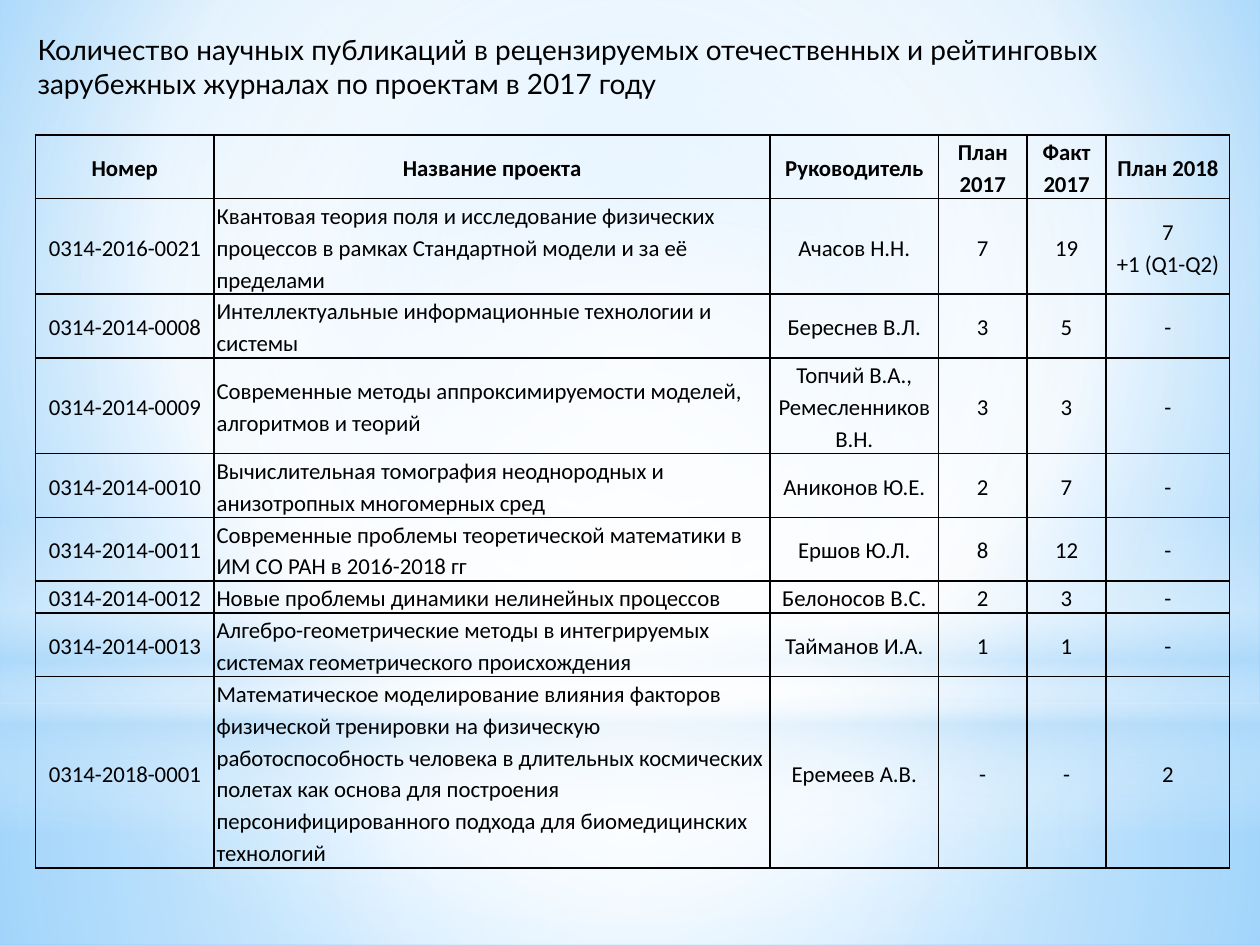
"""Build a slide with a table of publication counts by research project."""
import lxml.etree
import pptx
import pptx.dml.color
import pptx.enum.shapes
import pptx.enum.text
import pptx.oxml
import pptx.oxml.ns
import pptx.util
from pptx.util import Inches


def color(value):
    return pptx.dml.color.RGBColor.from_string(value)


def set_gradient(properties, stops, direction):
    gradient = pptx.oxml.parse_xml(
        f'<a:gradFill {pptx.oxml.ns.nsdecls("a")} rotWithShape="1"><a:gsLst>'
        + "".join(
            f'<a:gs pos="{position * 1000}"><a:srgbClr val="{value}">'
            f'<a:alpha val="{opacity * 1000}"/></a:srgbClr></a:gs>'
            for position, value, opacity in stops
        )
        + f"</a:gsLst>{direction}</a:gradFill>"
    )
    solid = properties.find(pptx.oxml.ns.qn("a:solidFill"))
    properties.replace(solid, gradient)


RADIAL = '<a:path path="circle"><a:fillToRect l="{}" t="{}" r="{}" b="{}"/></a:path>'
CENTER = RADIAL.format(50000, 50000, 50000, 50000)
VERTICAL = '<a:lin ang="5400000" scaled="0"/>'
RECTANGLE = pptx.enum.shapes.MSO_SHAPE.RECTANGLE
OVAL = pptx.enum.shapes.MSO_SHAPE.OVAL

presentation = pptx.Presentation()
presentation.slide_width = Inches(10)
presentation.slide_height = Inches(7.5)
slide = presentation.slides.add_slide(presentation.slide_layouts[6])

slide.background.fill.solid()
set_gradient(
    slide.background._cSld.bg.bgPr,
    [(0, "9ED5FF", 100), (60, "FFFFFF", 100), (100, "5BB9FF", 100)],
    RADIAL.format(20000, 10000, 20000, 60000),
)

backdrops = [
    (RECTANGLE, 0, 5.58, 1.92, CENTER,
     [(0, "FFFFFF", 91), (37, "FFFFFF", 76), (100, "B4DCFA", 79)]),
    (RECTANGLE, 0, 0, 5.58, CENTER,
     [(0, "FFFFFF", 89), (48, "FFFFFF", 62), (100, "B4DCFA", 79)]),
    (RECTANGLE, 0, 4.12, 2.5, VERTICAL,
     [(0, "FFFFFF", 0), (29, "FFFFFF", 30), (45, "B4DCFA", 40),
      (55, "FFFFFF", 26), (65, "B4DCFA", 60), (100, "FFFFFF", 0)]),
    (OVAL, 0, 1.75, 5.58, CENTER, [(0, "FFFFFF", 100), (56, "FFFFFF", 0)]),
]
for kind, left, top, height, direction, stops in backdrops:
    shape = slide.shapes.add_shape(
        kind, Inches(left), Inches(top), Inches(10), Inches(height))
    shape.shadow.inherit = False
    shape.line.fill.background()
    shape.fill.solid()
    set_gradient(shape._element.spPr, stops, direction)

projects = [
    ("Номер", "Название проекта", "Руководитель", "План 2017", "Факт 2017", "План 2018"),
    ("0314-2016-0021",
     "Квантовая теория поля и исследование физических процессов "
     "в рамках Стандартной модели и за её пределами",
     "Ачасов Н.Н.", "7", "19", "7\n+1 (Q1-Q2)"),
    ("0314-2014-0008", "Интеллектуальные информационные технологии и системы",
     "Береснев В.Л.", "3", "5", "-"),
    ("0314-2014-0009",
     "Современные методы аппроксимируемости моделей, алгоритмов и теорий",
     "Топчий В.А., Ремесленников В.Н.", "3", "3", "-"),
    ("0314-2014-0010",
     "Вычислительная томография неоднородных и анизотропных многомерных сред",
     "Аниконов Ю.Е.", "2", "7", "-"),
    ("0314-2014-0011",
     "Современные проблемы теоретической математики в ИМ СО РАН в 2016-2018 гг",
     "Ершов Ю.Л.", "8", "12", "-"),
    ("0314-2014-0012", "Новые проблемы динамики нелинейных процессов",
     "Белоносов В.С.", "2", "3", "-"),
    ("0314-2014-0013",
     "Алгебро-геометрические методы в интегрируемых системах "
     "геометрического происхождения",
     "Тайманов И.А.", "1", "1", "-"),
    ("0314-2018-0001",
     "Математическое моделирование влияния факторов физической тренировки "
     "на физическую работоспособность человека в длительных космических полетах "
     "как основа для построения персонифицированного подхода "
     "для биомедицинских технологий",
     "Еремеев А.В.", "-", "-", "2"),
]
column_widths = [1.42, 4.41, 1.34, 0.7, 0.63, 0.98]
line_counts = [2, 3, 2, 3, 2, 2, 1, 2, 6]
table_height = 5.73

table = slide.shapes.add_table(
    len(projects), len(column_widths),
    Inches(0.28), Inches(1.07), Inches(9.49), Inches(table_height),
).table
table.first_row = False
table.horz_banding = False
for column, width in zip(table.columns, column_widths):
    column.width = Inches(width)
for row, lines in zip(table.rows, line_counts):
    row.height = Inches(table_height * lines / sum(line_counts))

for row_index, project in enumerate(projects):
    for column_index, text in enumerate(project):
        cell = table.cell(row_index, column_index)
        cell.text = text
        cell.vertical_anchor = pptx.enum.text.MSO_ANCHOR.MIDDLE
        cell.margin_left = cell.margin_right = Inches(0.02)
        cell.margin_top = cell.margin_bottom = 0
        for side in ("lnL", "lnR", "lnT", "lnB"):
            cell._tc.get_or_add_tcPr().append(pptx.oxml.parse_xml(
                f'<a:{side} {pptx.oxml.ns.nsdecls("a")} w="12700"><a:solidFill>'
                f'<a:srgbClr val="000000"/></a:solidFill></a:{side}>'))
        cell.fill.background()
        left_aligned = row_index > 0 and column_index == 1
        for paragraph in cell.text_frame.paragraphs:
            paragraph.alignment = (
                pptx.enum.text.PP_ALIGN.LEFT if left_aligned
                else pptx.enum.text.PP_ALIGN.CENTER)
            paragraph.line_spacing = 1.15
            if row_index > 1 and column_index == 0:
                paragraph.space_after = pptx.util.Pt(10)
            paragraph.font.name = "Calibri"
            paragraph.font.size = pptx.util.Pt(13)
            paragraph.font.bold = row_index == 0
            paragraph.font.color.rgb = color("000000")

title = slide.shapes.add_textbox(Inches(0.2), Inches(0.21), Inches(9.53), Inches(0.64))
title.text_frame.word_wrap = True
title.text_frame.auto_size = pptx.enum.text.MSO_AUTO_SIZE.SHAPE_TO_FIT_TEXT
paragraph = title.text_frame.paragraphs[0]
paragraph.text = (
    "Количество научных публикаций в рецензируемых отечественных "
    "и рейтинговых зарубежных журналах по проектам в 2017 году")
paragraph.font.name = "Lato"
paragraph.font.size = pptx.util.Pt(16)
paragraph.font.color.rgb = color("000000")

presentation.save("out.pptx")
